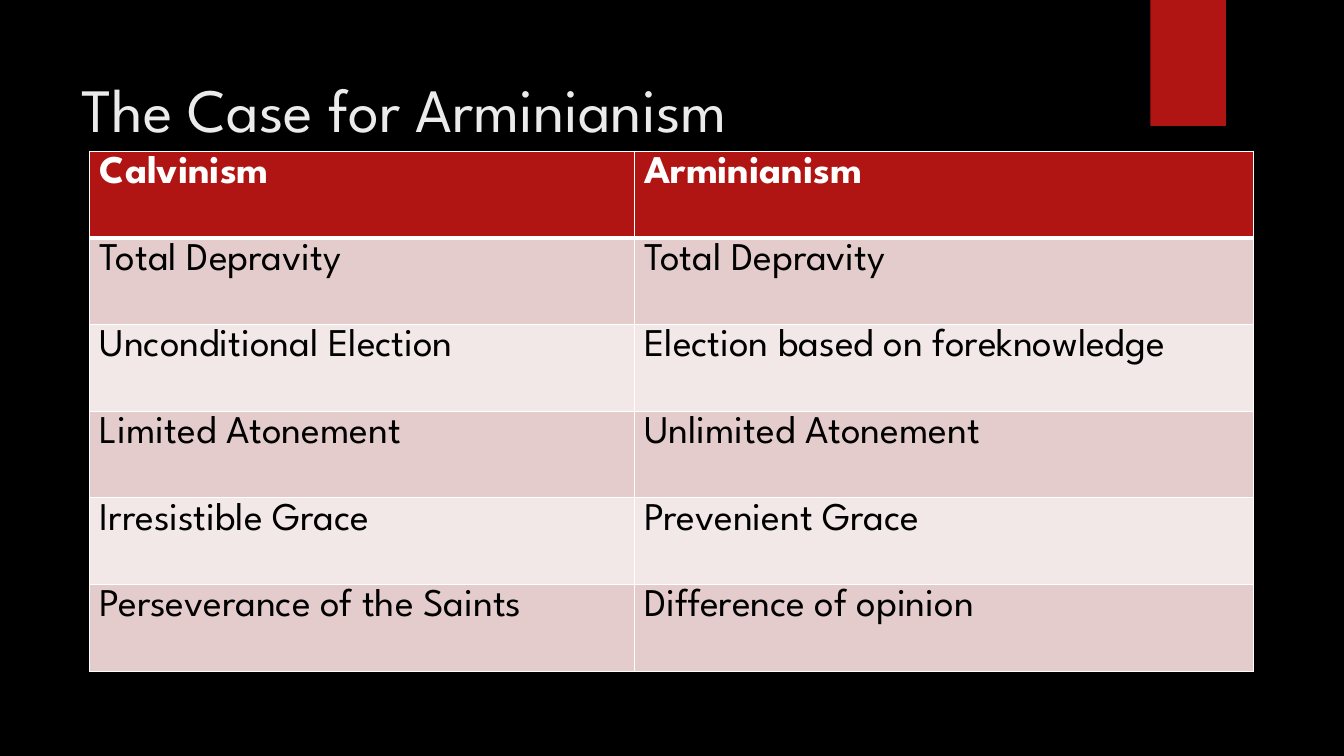
from dataclasses import dataclass

from lxml import etree
from pptx import Presentation
from pptx.dml.color import RGBColor
from pptx.enum import shapes, text
from pptx.oxml import ns
from pptx.util import Inches, Pt

# Content
TITLE = "The Case for Arminianism"
ROWS = [
    ("Calvinism", "Arminianism"),
    ("Total Depravity", "Total Depravity"),
    ("Unconditional Election", "Election based on foreknowledge"),
    ("Limited Atonement", "Unlimited Atonement"),
    ("Irresistible Grace", "Prevenient Grace"),
    ("Perseverance of the Saints", "Difference of opinion"),
]
COLUMN_WIDTHS = (5.4, 6.14)
ROW_HEIGHT = 0.86


@dataclass(frozen=True)
class Theme:
    font: str = "League Spartan"
    title_size: int = 44
    table_size: int = 28
    background: str = "000000"
    title: str = "EBEBEB"
    accent: str = "B01513"
    header_text: str = "FFFFFF"
    body_text: str = "000000"
    border: str = "FFFFFF"
    bands: tuple = ("F2E8E7", "E4CCCC")


THEME = Theme()


def paint(fill, color):
    fill.solid()
    fill.fore_color.rgb = RGBColor.from_string(color)


def style(paragraph, size, color, bold=False):
    font = paragraph.font
    font.name, font.size, font.bold = THEME.font, Pt(size), bold
    font.color.rgb = RGBColor.from_string(color)


def set_borders(cell, widths):
    """Draw the left, right, top and bottom borders, widths in points."""
    properties = cell._tc.get_or_add_tcPr()
    for index, (side, width) in enumerate(zip("LRTB", widths)):
        line = etree.Element(ns.qn(f"a:ln{side}"), w=str(Pt(width)))
        fill = etree.SubElement(line, ns.qn("a:solidFill"))
        etree.SubElement(fill, ns.qn("a:srgbClr"), val=THEME.border)
        properties.insert(index, line)


presentation = Presentation()
presentation.slide_width, presentation.slide_height = Inches(13.33), Inches(7.5)
slide = presentation.slides.add_slide(presentation.slide_layouts[5])
paint(slide.background.fill, THEME.background)

# Red tab at the top edge
tab = slide.shapes.add_shape(
    shapes.MSO_SHAPE.RECTANGLE, Inches(11.41), 0, Inches(0.75), Inches(1.25))
tab.shadow.inherit = False
paint(tab.fill, THEME.accent)
tab.line.fill.background()

# Title
title = slide.shapes.title
title.left, title.top = Inches(0.71), Inches(0.5)
title.width, title.height = Inches(10.29), Inches(1.53)
frame = title.text_frame
frame.text = TITLE
frame.word_wrap = True
frame.auto_size = text.MSO_AUTO_SIZE.NONE
frame.vertical_anchor = text.MSO_ANCHOR.TOP
frame.margin_top = Inches(0.2)
frame.paragraphs[0].alignment = text.PP_ALIGN.LEFT
style(frame.paragraphs[0], THEME.title_size, THEME.title)

# Comparison table
table = slide.shapes.add_table(
    len(ROWS), len(COLUMN_WIDTHS), Inches(0.89), Inches(1.5),
    Inches(sum(COLUMN_WIDTHS)), Inches(ROW_HEIGHT * len(ROWS))).table
for column, width in zip(table.columns, COLUMN_WIDTHS):
    column.width = Inches(width)

for row_index, labels in enumerate(ROWS):
    table.rows[row_index].height = Inches(ROW_HEIGHT)
    header = row_index == 0
    top = 3 if row_index == 1 else 1
    bottom = 3 if header else 1
    for column_index, label in enumerate(labels):
        cell = table.cell(row_index, column_index)
        cell.text = label
        cell.vertical_anchor = text.MSO_ANCHOR.TOP
        paint(cell.fill, THEME.accent if header else THEME.bands[row_index % 2])
        set_borders(cell, (1, 1, top, bottom))
        color = THEME.header_text if header else THEME.body_text
        style(cell.text_frame.paragraphs[0], THEME.table_size, color, header)

presentation.save("out.pptx")
